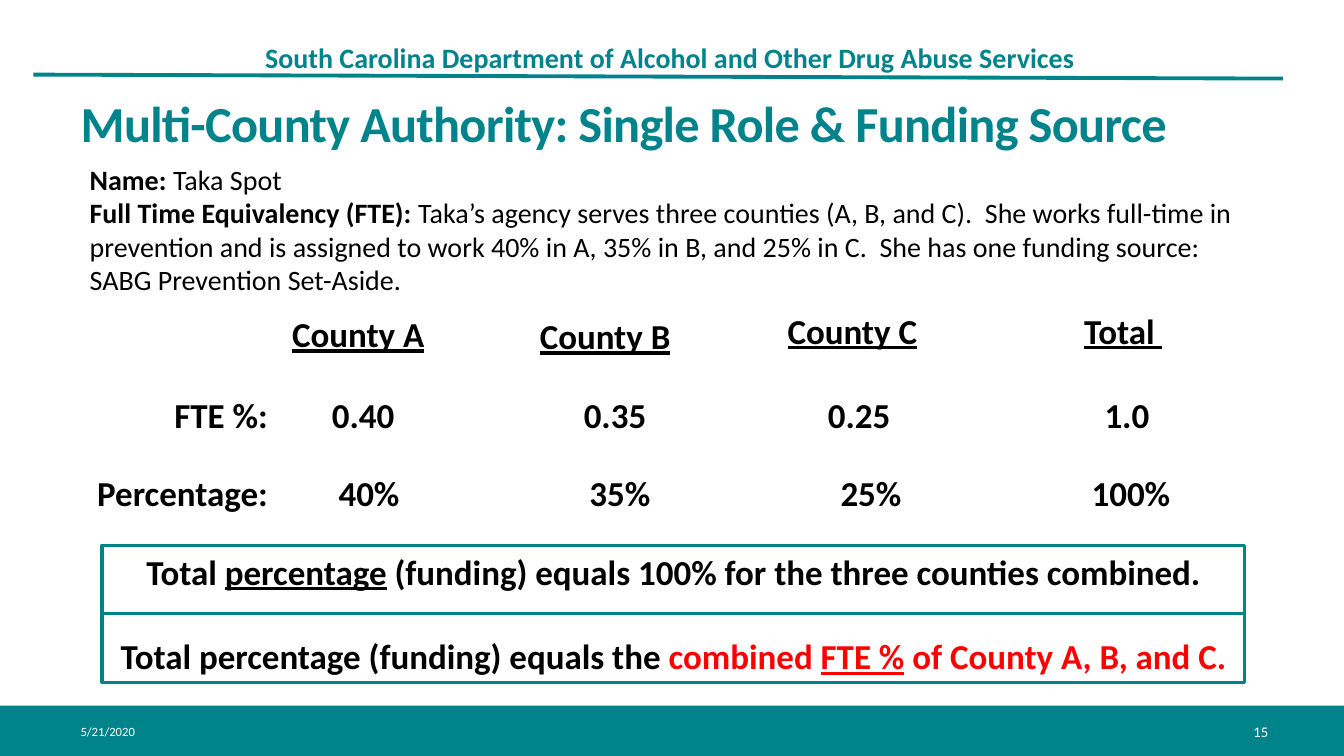
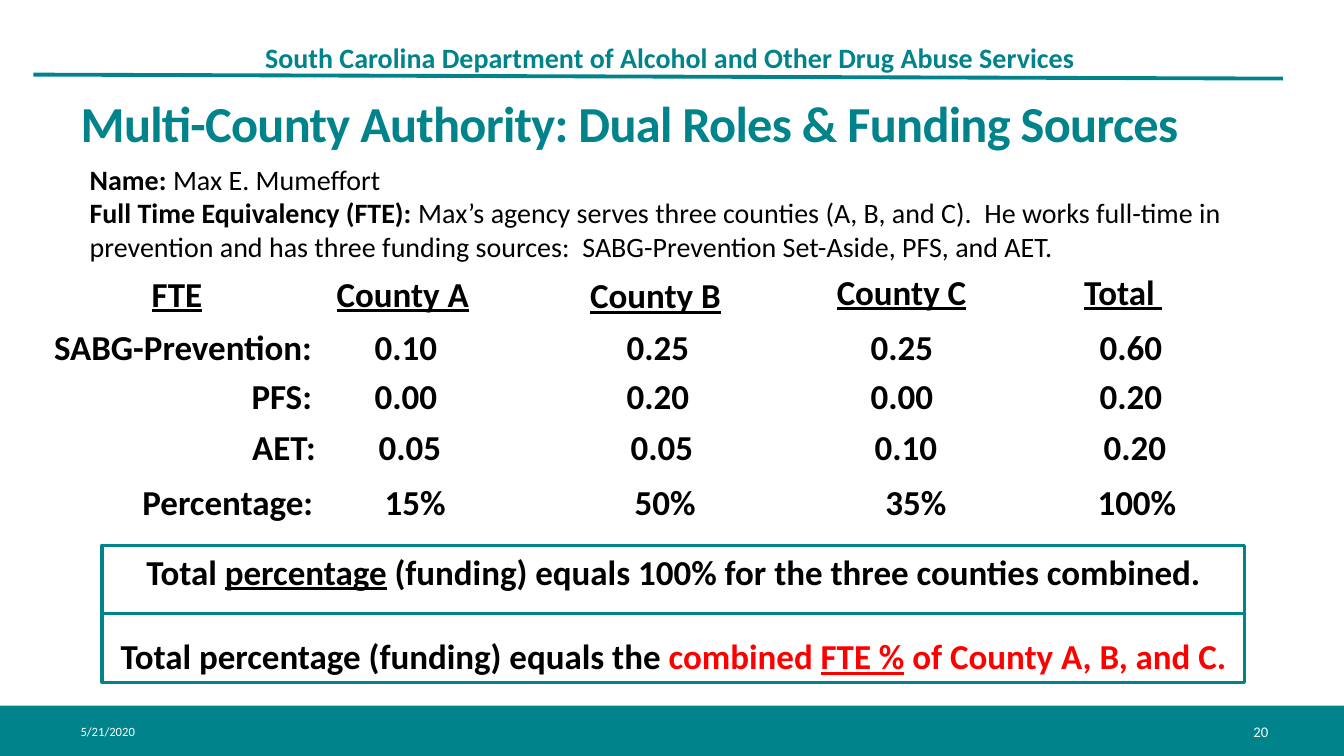
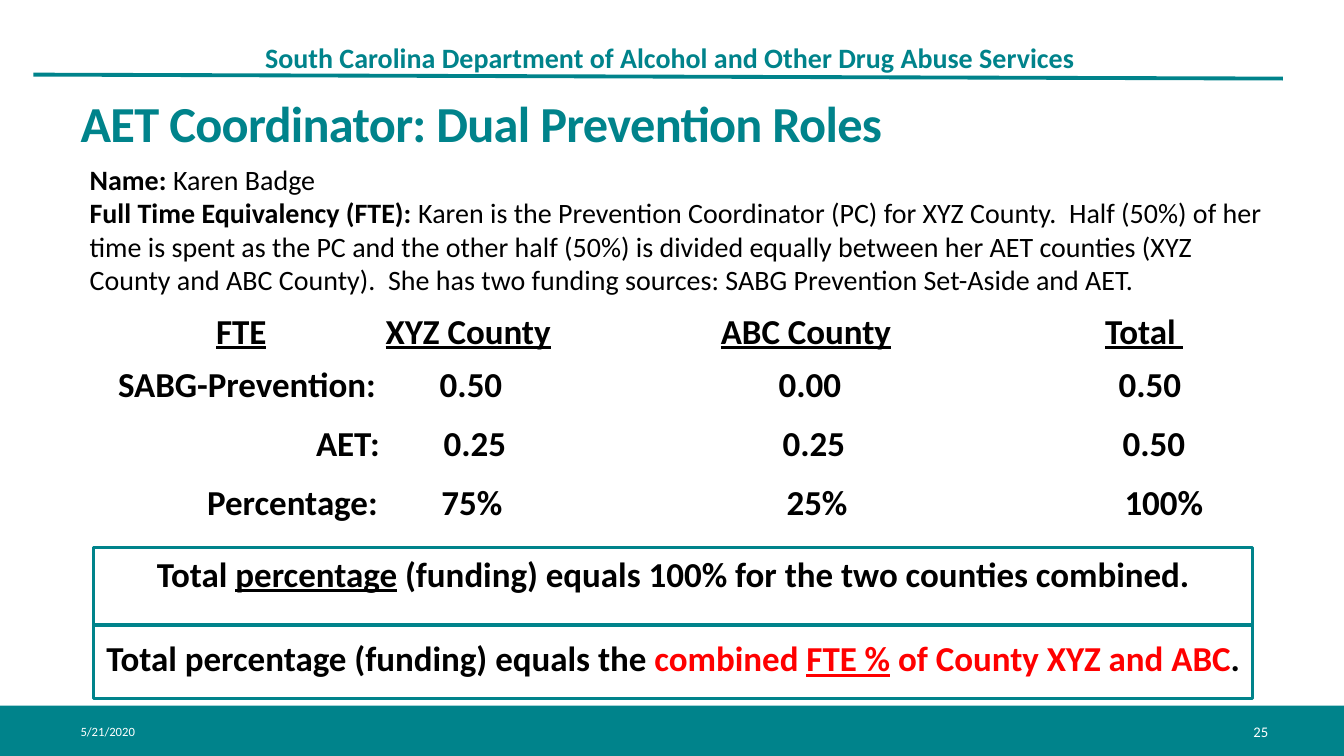
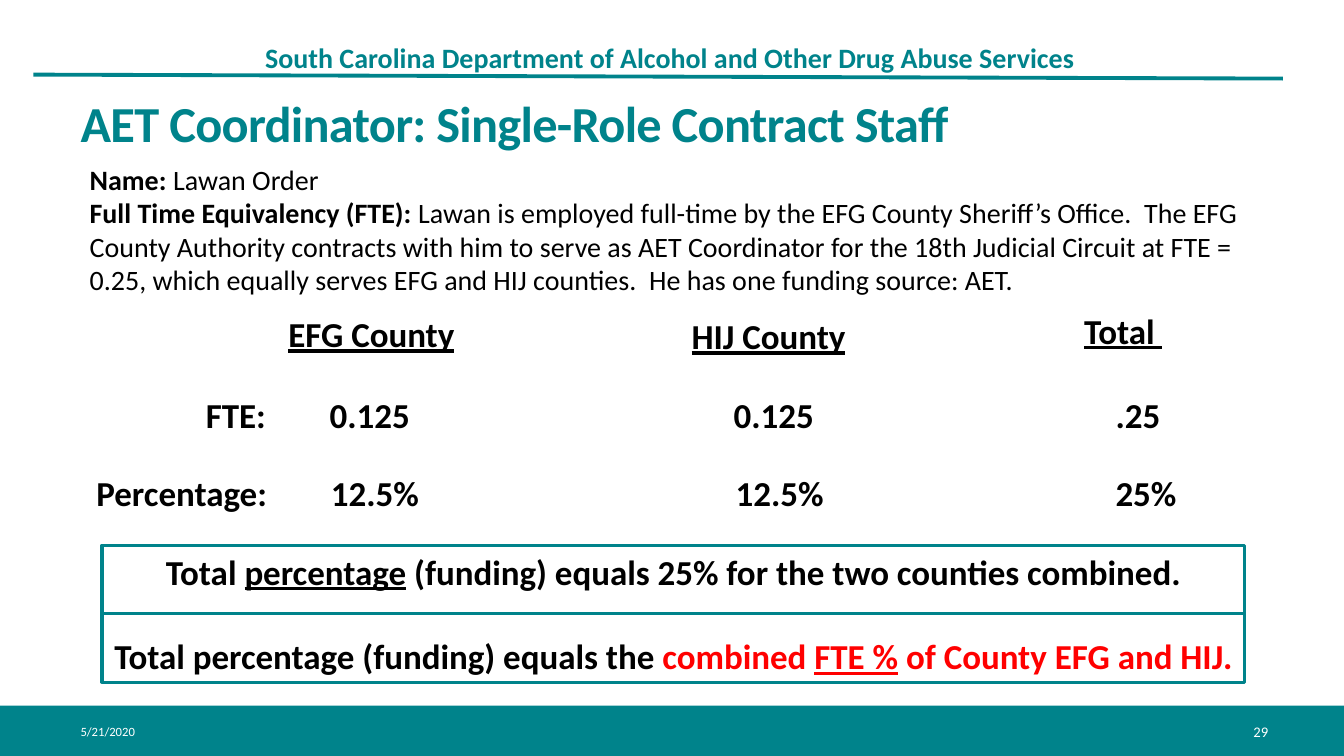
import dataclasses

import lxml.etree
import pptx
import pptx.dml.color
import pptx.enum.shapes
import pptx.enum.text
import pptx.oxml.ns
import pptx.util

Cm = pptx.util.Cm
Pt = pptx.util.Pt
qn = pptx.oxml.ns.qn
RGB = pptx.dml.color.RGBColor
Align = pptx.enum.text.PP_ALIGN
Anchor = pptx.enum.text.MSO_ANCHOR
STRAIGHT = pptx.enum.shapes.MSO_CONNECTOR.STRAIGHT
RECTANGLE = pptx.enum.shapes.MSO_SHAPE.RECTANGLE


@dataclasses.dataclass(frozen=True)
class Theme:
    font: str = "Calibri"
    teal: RGB = RGB(0x00, 0x83, 0x8B)
    black: RGB = RGB(0, 0, 0)
    white: RGB = RGB(255, 255, 255)
    red: RGB = RGB(255, 0, 0)
    title: float = 36
    grid: float = 25
    body: float = 20
    number: float = 10.5
    date: float = 9
    header_rule: float = 2.75
    frame_rule: float = 2.25


theme = Theme()
PLAIN = {}
BOLD = {"bold": True}
HEADING = {"bold": True, "underline": True}
RED = {"bold": True, "color": theme.red}
RED_UNDERLINED = {"bold": True, "underline": True, "color": theme.red}


def write(para, spans, size, color=theme.black):
    for text, style in spans:
        if text == "\v":
            para.add_line_break()
            continue
        span = para.add_run()
        span.text = text
        span.font.name = theme.font
        span.font.size = Pt(size)
        span.font.bold = style.get("bold", False)
        span.font.underline = style.get("underline", False)
        span.font.color.rgb = style.get("color", color)


def add_rule(page, start, end, width):
    rule = page.shapes.add_connector(STRAIGHT, *map(Cm, start + end))
    rule.line.color.rgb = theme.teal
    rule.line.width = Pt(width)
    lxml.etree.SubElement(rule.element.spPr, qn("a:effectLst"))
    return rule


GRID_LEFT = 1
HEADING_WIDTH = 6.68
ROW_HEIGHT = 1.32
STANDARD_FRAME = (2.57, 13.74, 28.8, 3.45, 15.47)
WIDE_FRAME = (2.36, 13.79, 29.21, 3.81, 15.75)

pages = [
    {
        "number": "15",
        "title": "Multi-County Authority: Single Role & Funding Source",
        "name": "Taka Spot",
        "story": ["Taka’s agency serves three counties (A, B, and C).  She works full-time in prevention and is assigned to work 40% in A, 35% in B, and 25% in C.  She has one funding source: ",
                  "\v", "SABG Prevention Set-Aside."],
        "headings": [("County A", 5.69, 7.75), ("County B", 11.91, 7.8),
                     ("County C", 18.14, 7.67), ("Total ", 24.97, 7.67)],
        "fte_stops": (6.75, 9.15, 15.5, 21.65, 28.4),
        "fte_rows": [(9.78, 0, "FTE %:", "0.40", "0.35", "0.25", "1.0")],
        "percentage_stops": (6.75, 9.3, 15.62, 21.95, 28.5),
        "percentages": (11.76, 0, "Percentage:", "40%", "35%", "25%", "100%"),
        "frame": STANDARD_FRAME,
        "sum": "100% for the three",
        "counties": [(" of County A, B, and C.", RED)],
    },
    {
        "number": "20",
        "title": "Multi-County Authority: Dual Roles & Funding Sources",
        "name": "Max E. Mumeffort",
        "story": ["Max’s agency serves three counties (A, B, and C).  He works full-time in prevention and has three funding sources:  SABG-Prevention Set-Aside, PFS, and AET."],
        "headings": [("FTE", 1.12, 6.73), ("County A", 6.81, 6.73), ("County B", 13.18, 6.78),
                     ("County C", 19.38, 6.68), ("Total ", 24.97, 6.68)],
        "fte_stops": (7.86, 10.23, 16.58, 22.73, 28.5),
        "fte_rows": [(8.08, 0, "SABG-Prevention:", "0.10", "0.25", "0.25", "0.60"),
                     (9.32, 0, "PFS:", "0.00", "0.20", "0.00", "0.20"),
                     (10.59, 0.1, "AET:", "0.05", "0.05", "0.10", "0.20")],
        "percentage_stops": (7.89, 10.46, 16.76, 23.08, 28.65),
        "percentages": (11.99, 0, "Percentage:", "15%", "50%", "35%", "100%"),
        "frame": STANDARD_FRAME,
        "sum": "100% for the three",
        "counties": [(" of County A, B, and C.", RED)],
    },
    {
        "number": "25",
        "title": "AET Coordinator: Dual Prevention Roles",
        "name": "Karen Badge",
        "story": ["Karen is the Prevention Coordinator (PC) for XYZ County.  Half (50%) of her time is spent as the PC and the other half (50%) is divided equally between her AET counties (XYZ County and ABC County).  She has two funding sources: SABG Prevention Set-Aside and AET."],
        "headings": [("FTE", 2.74, 7.67), ("XYZ County", 8.46, 7.67),
                     ("ABC County", 16.97, 7.67), ("Total ", 25.5, 7.67)],
        "fte_stops": (9.47, 11.87, 20.41, 28.98),
        "fte_rows": [(9.02, 0, "SABG-Prevention:", "0.50", "0.00", "0.50"),
                     (10.49, 0.1, "AET:", "0.25", "0.25", "0.50")],
        "percentage_stops": (9.52, 11.89, 20.59, 29.33),
        "percentages": (11.99, 0, "Percentage:", "75%", "25%", "100%"),
        "frame": WIDE_FRAME,
        "sum": "100% for the two",
        "counties": [(" of County XYZ and ABC", RED), (".", BOLD)],
    },
    {
        "number": "29",
        "title": "AET Coordinator: Single-Role Contract Staff",
        "name": "Lawan Order",
        "story": ["Lawan is employed full-time by the EFG County Sheriff’s Office.  The EFG County Authority contracts with him to serve as AET Coordinator for the 18th Judicial Circuit at FTE = 0.25, which equally serves EFG and HIJ counties.  He has one funding source: AET."],
        "headings": [("EFG County", 6.02, 7.75), ("HIJ County", 16.03, 7.8),
                     ("Total ", 24.97, 7.67)],
        "fte_stops": (6.7, 9.32, 19.5, 28.68),
        "fte_rows": [(9.78, 0, "FTE:", "0.125", "0.125", ".25")],
        "percentage_stops": (6.73, 9.45, 19.65, 28.88),
        "percentages": (11.76, 0, "Percentage:", "12.5%", "12.5%", "25%"),
        "frame": STANDARD_FRAME,
        "sum": "25% for the two",
        "counties": [(" of County EFG and HIJ.", RED)],
    },
]

deck = pptx.Presentation()
deck.slide_width = Cm(33.87)
deck.slide_height = Cm(19.05)
layout = deck.slide_layouts[5]

for index, content in enumerate(pages):
    page = deck.slides.add_slide(layout)

    if index == 0:
        agency = page.shapes.add_textbox(Cm(6.5), Cm(0.71), Cm(25.93), Cm(1.6))
        agency.text_frame.word_wrap = True
        agency.text_frame.vertical_anchor = Anchor.MIDDLE
        agency.text_frame.margin_left = Cm(0.18)
        para = agency.text_frame.paragraphs[0]
        para.line_spacing = 0.9
        write(para, [("South Carolina Department of Alcohol and Other Drug Abuse Services", BOLD)],
              theme.body, theme.teal)
        header_rule = add_rule(page, (0.84, 1.88), (32.33, 1.98), theme.header_rule)
        band = page.shapes.add_shape(RECTANGLE, 0, Cm(17.78), deck.slide_width, Cm(1.27))
        band.shadow.inherit = False
        band.fill.solid()
        band.fill.fore_color.rgb = theme.teal
        band.line.fill.background()
        for shared in (agency, header_rule, band):
            layout.shapes.element.append(shared.element)

    for text, left, width, size, align in (
        ("5/21/2020", 1.78, 6.86, theme.date, Align.LEFT),
        (content["number"], 28.58, 3.63, theme.number, Align.RIGHT),
    ):
        box = page.shapes.add_textbox(Cm(left), Cm(17.93), Cm(width), Cm(1.02))
        box.text_frame.word_wrap = True
        box.text_frame.vertical_anchor = Anchor.MIDDLE
        para = box.text_frame.paragraphs[0]
        para.alignment = align
        write(para, [(text, PLAIN)], size, theme.white)

    title = page.shapes.title
    title.left, title.top, title.width, title.height = map(Cm, (1.78, 2.44, 30.99, 1.68))
    title.text_frame.auto_size = pptx.enum.text.MSO_AUTO_SIZE.NONE
    title.text_frame.vertical_anchor = Anchor.TOP
    para = title.text_frame.paragraphs[0]
    para.alignment = Align.LEFT
    para.line_spacing = 0.85
    write(para, [(content["title"], BOLD)], theme.title, theme.teal)
    para.runs[0].font.language_id = pptx.enum.lang.MSO_LANGUAGE_ID.ENGLISH_US
    para.runs[0]._r.get_or_add_rPr().set("spc", "-50")

    intro = page.shapes.add_textbox(Cm(2.01), Cm(3.96), Cm(30.23), Cm(3.68))
    intro.text_frame.word_wrap = True
    write(intro.text_frame.paragraphs[0], [("Name: ", BOLD), (content["name"], PLAIN)], theme.body)
    story = [(text, PLAIN) for text in content["story"]]
    write(intro.text_frame.add_paragraph(),
          [("Full Time Equivalency (FTE): ", BOLD)] + story, theme.body)

    for text, left, top in content["headings"]:
        box = page.shapes.add_textbox(Cm(left), Cm(top), Cm(HEADING_WIDTH), Cm(ROW_HEIGHT))
        box.text_frame.word_wrap = True
        para = box.text_frame.paragraphs[0]
        para.alignment = Align.CENTER
        write(para, [(text, HEADING)], theme.grid)

    rows = [(content["fte_stops"], row) for row in content["fte_rows"]]
    rows.append((content["percentage_stops"], content["percentages"]))
    for stops, (top, shift, *cells) in rows:
        box = page.shapes.add_textbox(Cm(GRID_LEFT + shift), Cm(top), Cm(31), Cm(ROW_HEIGHT))
        box.text_frame.word_wrap = True
        box.text_frame.margin_left = 0
        para = box.text_frame.paragraphs[0]
        tabs = lxml.etree.SubElement(para._p.get_or_add_pPr(), qn("a:tabLst"))
        for column, stop in enumerate(stops):
            tab = lxml.etree.SubElement(tabs, qn("a:tab"))
            tab.set("pos", str(Cm(stop - GRID_LEFT)))
            tab.set("algn", "ctr" if column else "r")
        para.text = "".join("\t" + cell for cell in cells)
        span = para.runs[0]
        span.font.name = theme.font
        span.font.size = Pt(theme.grid)
        span.font.bold = True
        span.font.color.rgb = theme.black

    left, top, width, height, middle = content["frame"]
    frame = page.shapes.add_shape(RECTANGLE, Cm(left), Cm(top), Cm(width), Cm(height))
    frame.shadow.inherit = False
    frame.fill.background()
    frame.line.color.rgb = theme.teal
    frame.line.width = Pt(theme.frame_rule)
    frame.text_frame.word_wrap = True
    frame.text_frame.vertical_anchor = Anchor.TOP
    frame.text_frame.margin_left = frame.text_frame.margin_right = 0
    first = frame.text_frame.paragraphs[0]
    second = frame.text_frame.add_paragraph()
    second.space_before = Pt(30.5)
    first.alignment = second.alignment = Align.CENTER
    write(first, [("Total ", BOLD), ("percentage", HEADING),
                  (f" (funding) equals {content['sum']} counties combined.", BOLD)], theme.grid)
    write(second, [("Total percentage (funding) equals the ", BOLD), ("combined ", RED),
                   ("FTE %", RED_UNDERLINED)] + content["counties"], theme.grid)
    add_rule(page, (left, middle), (left + width, middle), theme.frame_rule)

deck.save("out.pptx")
